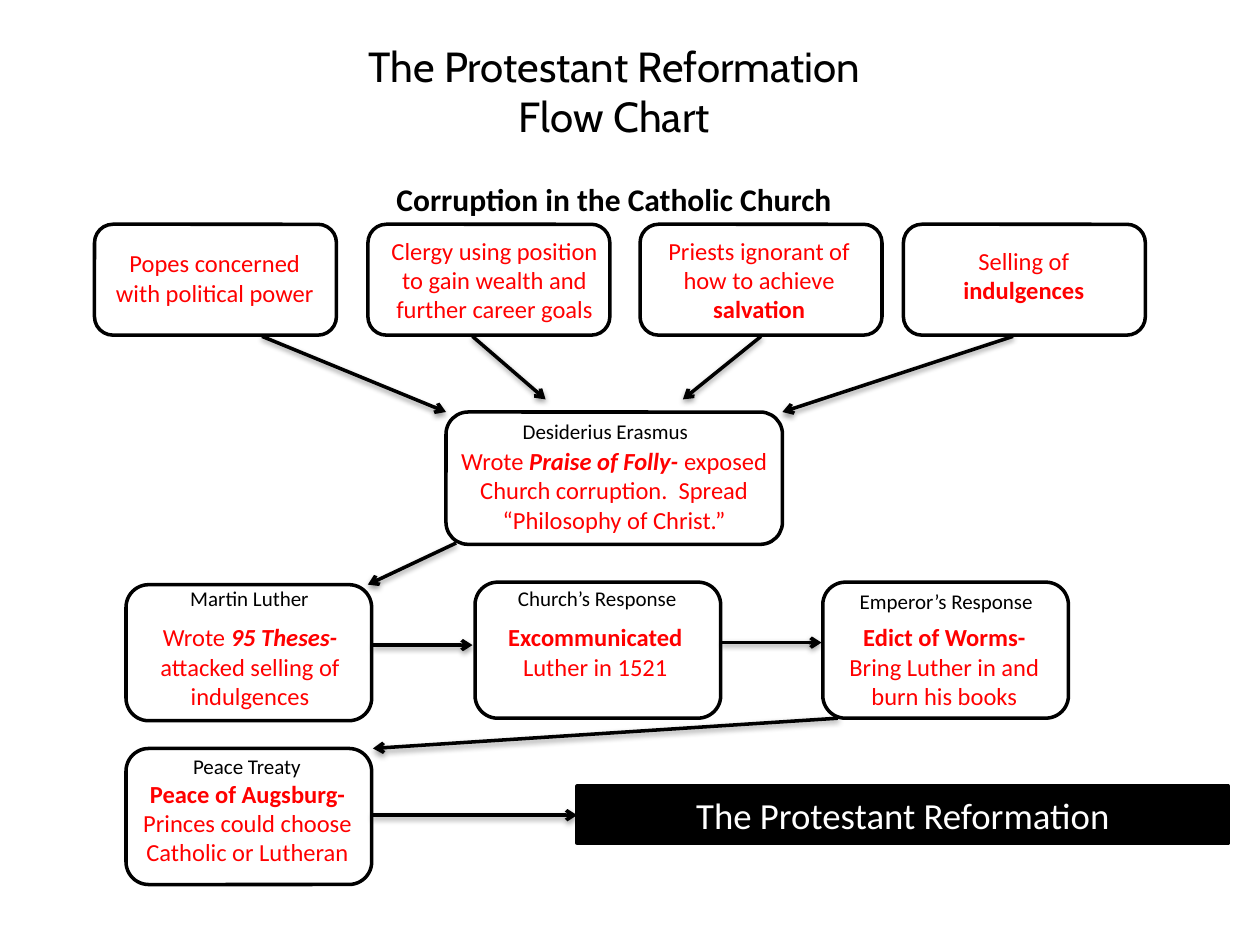
import dataclasses

import lxml.etree
import pptx
import pptx.dml.color
import pptx.enum.shapes
import pptx.enum.text
import pptx.oxml
import pptx.oxml.ns
import pptx.util

Inches = pptx.util.Inches
Shape = pptx.enum.shapes.MSO_SHAPE
Align = pptx.enum.text.PP_ALIGN
Color = pptx.dml.color.RGBColor


@dataclasses.dataclass(frozen=True)
class Theme:
    black: Color = Color(0, 0, 0)
    white: Color = Color(255, 255, 255)
    red: Color = Color(255, 0, 0)
    head: str = "Cabin"
    body: str = "Calibri"
    title: int = 24
    result: int = 21
    topic: int = 18
    note: int = 14
    label: int = 12
    line: int = 2


THEME = Theme()

CAUSES = [
    (0.75, 0.75, 1.92, [("Popes concerned with political power", "")]),
    (2.92, 2.97, 1.82,
     [("Clergy using position to gain wealth and further career goals", "")]),
    (5.08, 5.07, 1.82,
     [("Priests ignorant of how to achieve ", ""), ("salvation", "b")]),
    (7.17, 7.17, 1.9, [("Selling of ", ""), ("indulgences", "b")]),
]

EVENTS = [
    ((1, 4.64), (1.12, 4.6), "Martin Luther", (1.03, 4.89),
     [("Wrote ", ""), ("95 Theses- ", "bi"),
      ("attacked selling of indulgences", "")]),
    ((3.77, 4.62), (3.88, 4.6), "Church’s Response", (3.77, 4.89),
     [("Excommunicated", "b"), (" Luther in 1521", "")]),
    ((6.53, 4.62), (6.65, 4.62), "Emperor’s Response", (6.54, 4.89),
     [("Edict of Worms- ", "b"), ("Bring Luther in and burn his books", "")]),
    ((1, 5.94), (1.1, 5.93), "Peace Treaty", (1.01, 6.13),
     [("Peace of Augsburg- ", "b"),
      ("Princes could choose Catholic or Lutheran", "")]),
]

ARROWS = [
    (2.08, 2.67, 3.54, 3.27),
    (3.75, 2.67, 4.33, 3.17),
    (6.04, 2.67, 5.42, 3.17),
    (8.04, 2.67, 6.21, 3.27),
    (3.62, 4.31, 2.92, 4.64),
    (2.96, 5.12, 3.75, 5.12),
    (5.73, 5.1, 6.52, 5.1),
    (6.65, 5.7, 2.96, 5.94),
    (2.95, 6.47, 4.58, 6.47),
]

SHADOW = (
    '<a:effectLst %s><a:outerShdw blurRad="40000" dist="20000" dir="5400000" '
    'rotWithShape="0"><a:srgbClr val="000000"><a:alpha val="38000"/>'
    '</a:srgbClr></a:outerShdw></a:effectLst>' % pptx.oxml.ns.nsdecls("a")
)


def apply(item, style):
    for name, value in style.items():
        setattr(item, name, value)


def write(frame, paras, size, color, font=THEME.body, align=Align.CENTER):
    apply(frame, {"word_wrap": True,
                  "auto_size": pptx.enum.text.MSO_AUTO_SIZE.SHAPE_TO_FIT_TEXT})
    for index, parts in enumerate(paras):
        para = frame.add_paragraph() if index else frame.paragraphs[0]
        para.alignment = align
        for text, marks in parts:
            run = para.add_run()
            run.text = text
            apply(run.font, {"name": font, "size": pptx.util.Pt(size),
                             "bold": "b" in marks, "italic": "i" in marks})
            run.font.color.rgb = color


def add_text(slide, area, paras, size, color=THEME.black, **style):
    box = slide.shapes.add_textbox(*map(Inches, area))
    write(box.text_frame, paras, size, color, **style)


def add_box(slide, area, kind=Shape.ROUNDED_RECTANGLE, fill=None):
    box = slide.shapes.add_shape(kind, *map(Inches, area))
    box.shadow.inherit = False
    if fill is None:
        box.fill.background()
    else:
        box.fill.solid()
        box.fill.fore_color.rgb = fill
    trace(box.line)
    return box


def trace(line):
    line.color.rgb = THEME.black
    line.width = pptx.util.Pt(THEME.line)


def add_arrow(slide, ends):
    link = slide.shapes.add_connector(
        pptx.enum.shapes.MSO_CONNECTOR.STRAIGHT, *map(Inches, ends))
    trace(link.line)
    lxml.etree.SubElement(link.get_or_add_ln(),
                          pptx.oxml.ns.qn("a:tailEnd"), type="arrow")
    link._element.spPr.append(pptx.oxml.parse_xml(SHADOW))


def add_causes(slide):
    for left, inner, top, parts in CAUSES:
        add_box(slide, (left, 1.78, 1.92, 0.88))
        add_text(slide, (inner, top, 1.91, 0.81), [parts], THEME.note, THEME.red)


def add_author(slide):
    add_box(slide, (3.54, 3.27, 2.67, 1.05))
    add_text(slide, (4.05, 3.27, 1.54, 0.3), [[("Desiderius Erasmus", "")]],
             THEME.label, align=Align.LEFT)
    parts = [("Wrote ", ""), ("Praise of Folly- ", "bi"),
             ("exposed Church corruption.  Spread “Philosophy of Christ.”", "")]
    add_text(slide, (3.54, 3.49, 2.67, 0.81), [parts], THEME.note, THEME.red)


def add_events(slide):
    for box, head, label, note, parts in EVENTS:
        add_box(slide, (*box, 1.95, 1.08))
        add_text(slide, (*head, 1.72, 0.3), [[(label, "")]], THEME.label)
        add_text(slide, (*note, 1.91, 0.81), [parts], THEME.note, THEME.red)


def add_result(slide):
    box = add_box(slide, (4.58, 6.24, 5.17, 0.45), Shape.RECTANGLE, THEME.black)
    write(box.text_frame, [[("The Protestant Reformation", "")]],
          THEME.result, THEME.white)


def main():
    deck = pptx.Presentation()
    apply(deck, {"slide_width": Inches(10), "slide_height": Inches(7.5)})
    slide = deck.slides.add_slide(deck.slide_layouts[6])
    add_text(slide, (2.25, 0.27, 5.25, 0.91),
             [[("The Protestant Reformation", "")], [("Flow Chart", "")]],
             THEME.title, font=THEME.head)
    add_text(slide, (2.96, 1.38, 3.83, 0.4),
             [[("Corruption in the Catholic Church", "b")]], THEME.topic)
    add_causes(slide)
    add_author(slide)
    add_events(slide)
    for ends in ARROWS:
        add_arrow(slide, ends)
    add_result(slide)
    deck.save("out.pptx")


if __name__ == "__main__":
    main()
